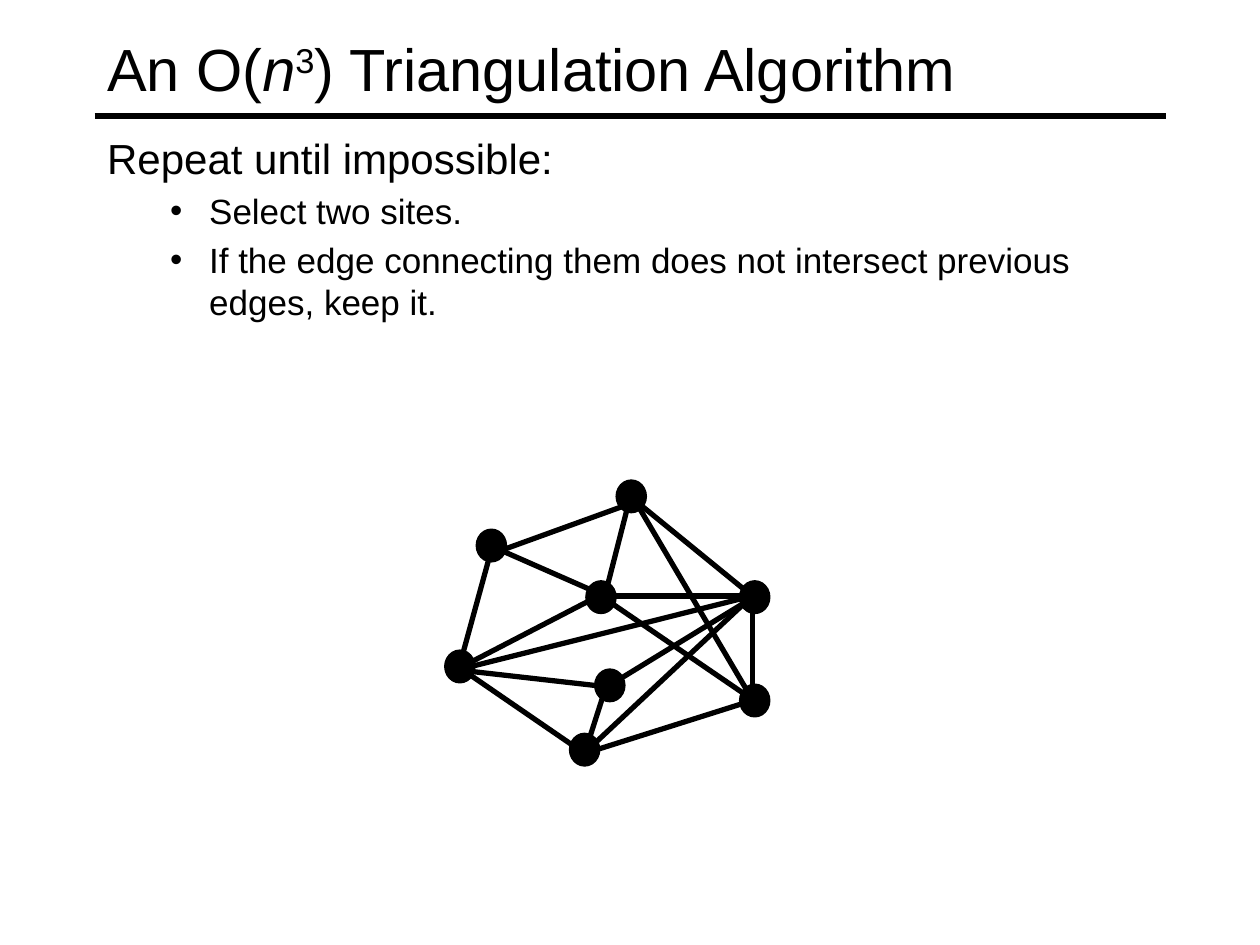
from lxml import etree
from pptx import Presentation
from pptx import util as u
from pptx.dml.color import RGBColor
from pptx.enum import shapes, text
from pptx.oxml.ns import qn

PX = 9144  # 100 px to the inch
BLACK = "000000"
SLIDE_SIZE = (1000, 750)
TITLE_BOX = (75, 8, 850, 92)
BODY_BOX = (75, 100, 850, 575)
TITLE_RULE = (75, 92, 925, 92)
SITE_SIZE = (24, 26)

TITLE_RUNS = [
    ("An O(", {}, None),
    ("n", {"italic": True}, None),
    ("3", {}, 30000),
    (") Triangulation Algorithm", {}, None),
]
BODY = [
    ("Repeat until impossible:", 0),
    ("Select two sites.", 1),
    ("If the edge connecting them does not intersect previous edges, keep it.", 1),
]
LEVELS = [
    {"size": 24, "left": 38, "hanging": 38, "bullet": None},
    {"size": 20, "left": 81, "hanging": 31, "bullet": "•"},
]
SITE_CENTRES = [
    (501, 394), (477, 474), (390, 433), (599, 474),
    (365, 529), (464, 595), (599, 556), (484, 444 + 100),
]
EDGES = [
    (477, 473, 597, 555), (502, 394, 597, 555), (505, 398, 597, 473),
    (597, 473, 480, 473), (389, 440, 505, 398), (500, 395, 480, 473),
    (598, 474, 482, 545), (597, 473, 597, 556), (481, 545, 366, 532),
    (364, 531, 389, 440), (480, 548, 464, 598), (362, 528, 464, 598),
    (389, 433, 480, 473), (597, 473, 472, 590), (597, 556, 464, 598),
    (597, 473, 362, 532), (365, 530, 477, 472),
]


def px(*values):
    return [value * PX for value in values]


def colour(value):
    return RGBColor.from_string(value)


def set_values(target, values):
    for name, value in values.items():
        setattr(target, name, value)


def place(shape, box):
    set_values(shape, dict(zip(("left", "top", "width", "height"), px(*box))))


def add_run(paragraph, words, size, values):
    run = paragraph.add_run()
    run.text = words
    set_values(run.font, {"name": "Arial", "size": u.Pt(size), **values})
    run.font.color.rgb = colour(BLACK)
    return run


def add_line(slide, ends):
    line = slide.shapes.add_connector(shapes.MSO_CONNECTOR.STRAIGHT, *px(*ends))
    line.line.color.rgb = colour(BLACK)
    line.line.width = u.Pt(3)
    etree.SubElement(line._element.spPr, qn("a:effectLst"))


def add_site(slide, centre):
    width, height = SITE_SIZE
    box = px(centre[0] - width // 2, centre[1] - height // 2, width, height)
    site = slide.shapes.add_shape(shapes.MSO_SHAPE.OVAL, *box)
    site.shadow.inherit = False
    site.fill.solid()
    site.fill.fore_color.rgb = colour(BLACK)
    site.line.color.rgb = colour(BLACK)
    site.line.width = u.Pt(0.75)


def fill_title(title):
    place(title, TITLE_BOX)
    set_values(title.text_frame, {
        "auto_size": text.MSO_AUTO_SIZE.NONE,
        "vertical_anchor": text.MSO_ANCHOR.MIDDLE,
    })
    paragraph = title.text_frame.paragraphs[0]
    paragraph.alignment = text.PP_ALIGN.LEFT
    for words, values, baseline in TITLE_RUNS:
        run = add_run(paragraph, words, 34, values)
        if baseline:
            run._r.get_or_add_rPr().set("baseline", str(baseline))


def fill_body(body):
    place(body, BODY_BOX)
    frame = body.text_frame
    frame.auto_size = text.MSO_AUTO_SIZE.NONE
    for index, (words, level) in enumerate(BODY):
        paragraph = frame.add_paragraph() if index else frame.paragraphs[0]
        paragraph.level = level
        style = LEVELS[level]
        properties = paragraph._p.get_or_add_pPr()
        properties.set("marL", str(style["left"] * PX))
        properties.set("indent", str(-style["hanging"] * PX))
        if style["bullet"]:
            etree.SubElement(properties, qn("a:buFont"), typeface="Arial")
            etree.SubElement(properties, qn("a:buChar"), char=style["bullet"])
        else:
            etree.SubElement(properties, qn("a:buNone"))
        add_run(paragraph, words, style["size"], {})


def main():
    presentation = Presentation()
    width, height = px(*SLIDE_SIZE)
    set_values(presentation, {"slide_width": width, "slide_height": height})
    slide = presentation.slides.add_slide(presentation.slide_layouts[1])
    fill_title(slide.shapes.title)
    fill_body(slide.placeholders[1])
    for ends in [TITLE_RULE, *EDGES]:
        add_line(slide, ends)
    for centre in SITE_CENTRES:
        add_site(slide, centre)
    presentation.save("out.pptx")


if __name__ == "__main__":
    main()
